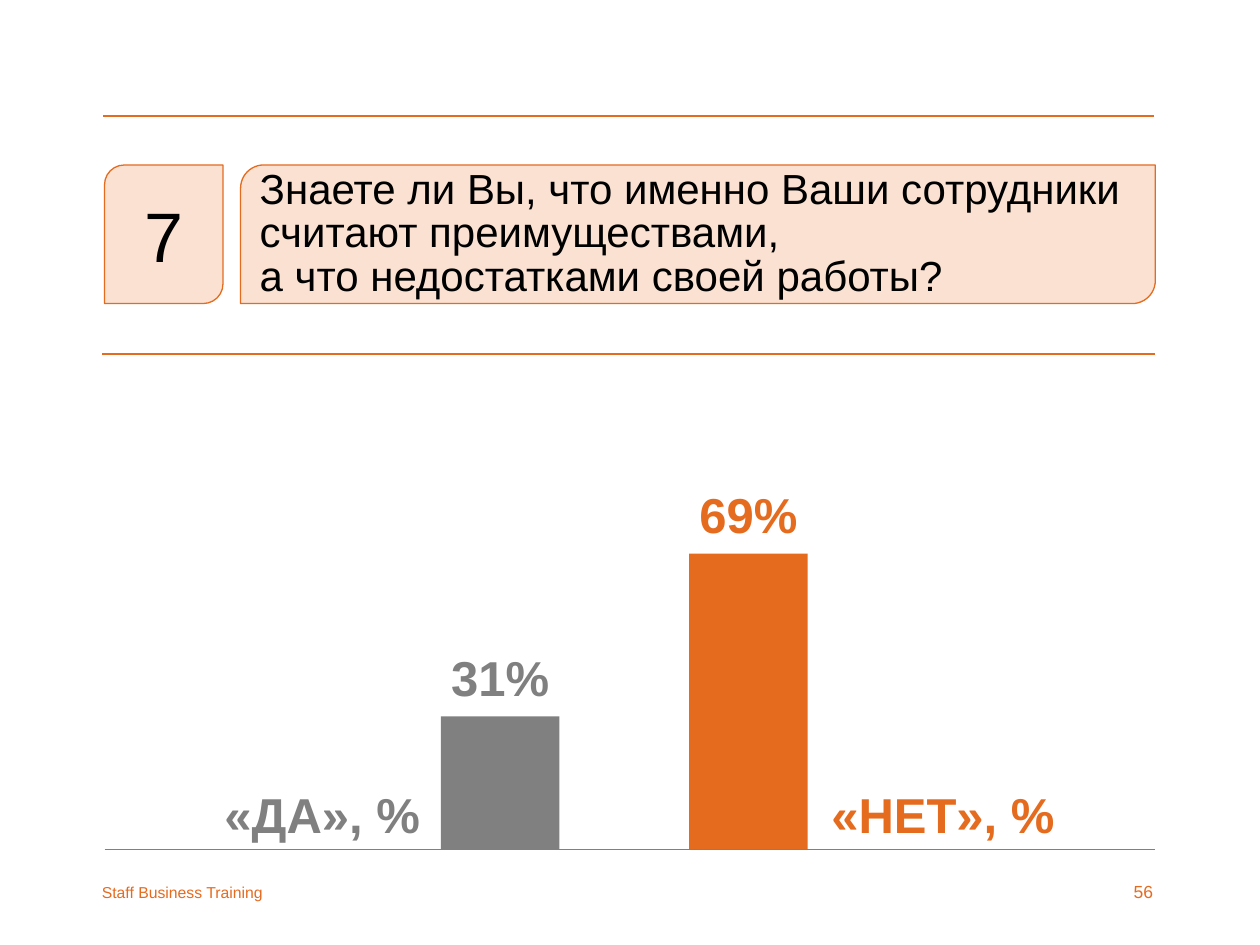
from pptx import Presentation
from pptx.dml.color import RGBColor
from pptx.enum.shapes import MSO_CONNECTOR, MSO_SHAPE
from pptx.enum.text import MSO_ANCHOR as ANCHOR, PP_ALIGN as ALIGN
from pptx.oxml.ns import qn
from pptx.util import Inches, Pt
from lxml import etree

THEME = {
    "font": "Arial",
    "orange": RGBColor.from_string("E56B1F"),
    "peach": RGBColor.from_string("FAE1D2"),
    "gray": RGBColor.from_string("808080"),
    "black": RGBColor.from_string("000000"),
    "number": 40, "label": 28, "question": 24, "page": 10, "footer": 9,
}

NUMBER = "7"
QUESTION = ("Знаете ли Вы, что именно Ваши сотрудники считают преимуществами,"
            "\vа что недостатками своей работы?")
FOOTER = "Staff Business Training"
PAGE = "56"
ANSWERS = [
    {"label": "«ДА», %", "value": 31, "color": "gray", "bar_x": 3.5,
     "label_x": 0.67, "align": ALIGN.RIGHT},
    {"label": "«НЕТ», %", "value": 69, "color": "orange", "bar_x": 5.47,
     "label_x": 6.5, "align": ALIGN.LEFT},
]
RULES = [(0.82, 9.16, 0.92, "orange", 1), (0.81, 9.17, 2.81, "orange", 1),
         (0.83, 9.17, 6.74, "gray", 0.75)]

BASE_Y = 6.74
BAR_W = 0.94
INCHES_PER_PERCENT = 0.034
VALUE_W = 1.26
LABEL_W, LABEL_H = 2.76, 0.63


def write(sp, text, size, color="black", bold=False, align=ALIGN.LEFT,
          anchor=ANCHOR.TOP, spacing=None):
    tf = sp.text_frame
    tf.word_wrap = True
    tf.vertical_anchor = anchor
    p = tf.paragraphs[0]
    p.text = text
    p.alignment = align
    if spacing:
        p.line_spacing = Pt(spacing)
    for r in p.runs:
        r.font.name = THEME["font"]
        r.font.size = Pt(THEME[size])
        r.font.bold = bold
        r.font.color.rgb = THEME[color]


def add_text(s, x, y, w, h, text, size, **fmt):
    sp = s.shapes.add_textbox(Inches(x), Inches(y), Inches(w), Inches(h))
    write(sp, text, size, **fmt)


def add_box(s, kind, x, y, w, h, fill, line=None):
    sp = s.shapes.add_shape(kind, Inches(x), Inches(y), Inches(w), Inches(h))
    sp.shadow.inherit = False
    sp.fill.solid()
    sp.fill.fore_color.rgb = THEME[fill]
    if line:
        sp.line.color.rgb = THEME[line]
        sp.line.width = Pt(0.75)
    else:
        sp.line.fill.background()
    return sp


def add_rule(s, x1, x2, y, color, width):
    sp = s.shapes.add_connector(MSO_CONNECTOR.STRAIGHT, Inches(x1), Inches(y),
                                Inches(x2), Inches(y))
    sp.line.color.rgb = THEME[color]
    sp.line.width = Pt(width)
    etree.SubElement(sp._element.spPr, qn("a:effectLst"))


def add_answer(s, answer):
    fmt = {"color": answer["color"], "bold": True}
    height = answer["value"] * INCHES_PER_PERCENT
    top = BASE_Y - height
    add_text(s, answer["label_x"], BASE_Y - LABEL_H, LABEL_W, LABEL_H,
             answer["label"], "label", align=answer["align"],
             anchor=ANCHOR.BOTTOM, **fmt)
    add_text(s, answer["bar_x"] - (VALUE_W - BAR_W) / 2, top - LABEL_H,
             VALUE_W, LABEL_H, f"{answer['value']}%", "label",
             align=ALIGN.CENTER, anchor=ANCHOR.MIDDLE, **fmt)
    add_box(s, MSO_SHAPE.RECTANGLE, answer["bar_x"], top, BAR_W, height,
            answer["color"])


def main():
    prs = Presentation()
    prs.slide_width, prs.slide_height = Inches(10), Inches(7.5)
    s = prs.slides.add_slide(prs.slide_layouts[6])

    for rule in RULES:
        add_rule(s, *rule)
    add_text(s, 8.75, 6.94, 0.5, 0.27, PAGE, "page", color="orange",
             align=ALIGN.RIGHT)
    add_text(s, 0.71, 6.96, 2.03, 0.25, FOOTER, "footer", color="orange")

    for x, w, text, size, align, spacing in [
        (0.83, 0.94, NUMBER, "number", ALIGN.CENTER, None),
        (1.91, 7.26, QUESTION, "question", ALIGN.LEFT, 25),
    ]:
        sp = add_box(s, MSO_SHAPE.ROUND_2_DIAG_RECTANGLE, x, 1.31, w, 1.1,
                     "peach", "orange")
        write(sp, text, size, align=align, anchor=ANCHOR.MIDDLE,
              spacing=spacing)

    for answer in ANSWERS:
        add_answer(s, answer)
    prs.save("out.pptx")


if __name__ == "__main__":
    main()
